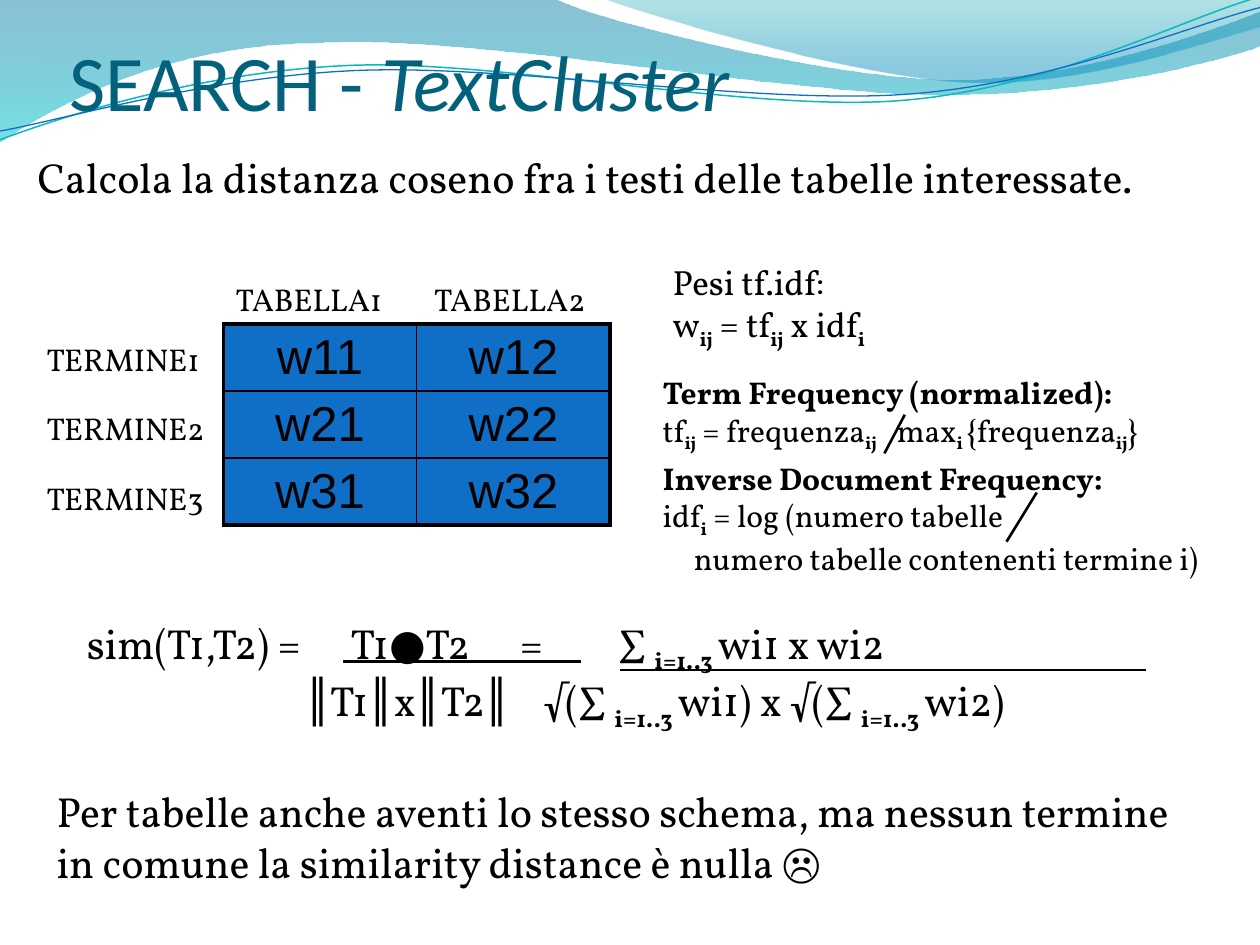
import pptx
import pptx.util
import pptx.dml.color
import pptx.enum.shapes
import pptx.enum.text
import pptx.oxml
import pptx.oxml.ns
from lxml import etree

Cm, Pt = pptx.util.Cm, pptx.util.Pt
qn = pptx.oxml.ns.qn

COLORS = {"ink": "000000", "title": "04617B", "cell": "0F6FC6",
          "teal line": "0AB8BF", "blue line": "0F6FC6"}

# Waves: start point, then straight (2 numbers) or curved (6 numbers) steps,
# measured in tenths of the slide width
WAVE_UNIT = 2.54
FILLED_WAVES = [
    ([(0, -0.01), (4.4, -0.01), (4.76, 0.17, 6.64, 0.63, 7.58, 0.63),
      (8.53, 0.63, 9.58, 0.26, 10, 0.09), (10.01, 0.36),
      (9.83, 0.44, 8.7, 0.76, 7.46, 0.75), (6.22, 0.75, 3.82, 0.28, 2.57, 0.34),
      (1.29, 0.35, 0.46, 0.83, -0.01, 1.13)],
     [(0, "0074A1", 45), (1, "00C6CF", 55)]),
    ([(4.79, -0.01), (5.09, 0.11, 6.82, 0.62, 7.69, 0.65),
      (8.56, 0.69, 9.61, 0.32, 10, 0.21), (10, 0)],
     [(0, "00A1A9", 30), (0.8, "008BBF", 45)]),
]
LINE_WAVES = [
    ([(0, 1.11), (0.48, 0.93, 1.58, 0.57, 2.77, 0.52),
      (3.95, 0.47, 5.93, 0.89, 7.13, 0.8), (8.33, 0.71, 9.38, 0.15, 9.98, -0.02)],
     "teal line", 0.85),
    ([(0, 1.04), (0.47, 0.96, 1.64, 0.61, 2.83, 0.56),
      (4.03, 0.51, 5.97, 0.83, 7.17, 0.75), (8.36, 0.67, 9.41, 0.21, 10, 0.06)],
     "blue line", 0.75),
]

# Text: pieces between tildes are subscripts; a paragraph may carry options
TITLE = "SEARCH - ~TextCluster~"
NOTES = [  # box in cm, size, paragraphs
    ((0.51, 3.12, 23.22, 2.21), 24, [
        ("Calcola la distanza coseno fra i testi delle tabelle interessate.",
         {"left": 0.96, "first": -0.96, "line": 0.8, "before": 4.8})]),
    ((1.5, 12.32, 22.61, 2.29), 24, [
        ("sim(T1,T2) =\tT1●T2\t=\t∑ ~i=1..3 ~wi1 x wi2", {"tabs": (5.32, 8.73, 10.7)}),
        ("\t║T1║x║T2║\t√(∑ ~i=1..3 ~wi1) x √(∑ ~i=1..3 ~wi2)", {"tabs": (4.4, 9.21)})]),
    ((13.31, 5.13, 5.59, 1.96), 20, [
        ("Pesi tf.idf:", {}),
        ("w~ij~ = tf~ij~ x idf~i~", {})]),
    ((13.11, 7.39, 10.52, 1.78), 18, [
        ("Term Frequency (normalized):", {"bold": True}),
        ("tf~ij~ = frequenza~ij~\tmax~i ~{frequenza~ij~}", {"tabs": (4.72,)})]),
    ((13.11, 9.12, 11.61, 2.54), 18, [
        ("Inverse Document Frequency:", {"bold": True}),
        ("idf~i~ = log (numero tabelle", {}),
        ("numero tabelle contenenti termine i)", {"left": 0.63})]),
    ((0.89, 15.72, 23.39, 2.29), 24, [
        ("Per tabelle anche aventi lo stesso schema, ma nessun termine "
         "in comune la similarity distance è nulla ☹", {})]),
]
TABLES = ["TABELLA1", "TABELLA2"]
TERMS = ["TERMINE1", "TERMINE2", "TERMINE3"]
WEIGHTS = [["w11", "w12"], ["w21", "w22"], ["w31", "w32"]]
MATRIX_LEFT, MATRIX_TOP, COLUMN_WIDTH, ROW_HEIGHT = 4.5, 6.53, 3.9, 1.35
FRACTION_BARS = [(18.24, 8.36, 17.83, 9.14), (6.91, 13.34, 11.71, 13.34),
                 (12.5, 13.51, 23.11, 13.51), (20.29, 10.92, 20.9, 9.93)]


def rgb(value):
    return pptx.dml.color.RGBColor.from_string(COLORS.get(value, value))


def wave(shapes, steps, closed):
    """Draw a wave through the step ends, then bend the curved steps."""
    steps = [[Cm(value * WAVE_UNIT) for value in step] for step in steps]
    builder = shapes.build_freeform(*steps[0])
    builder.add_line_segments([step[-2:] for step in steps[1:]], close=closed)
    shape = builder.convert_to_shape()
    shape.shadow.inherit = False
    segments = list(shape._element.iter(qn("a:lnTo")))
    for segment, step in zip(segments, steps[1:]):
        if len(step) == 6:
            segment.tag = qn("a:cubicBezTo")
            for index in (0, 2):
                control = etree.Element(qn("a:pt"), x=str(step[index] - shape.left),
                                        y=str(step[index + 1] - shape.top))
                segment.insert(index // 2, control)
    return shape


def write(paragraph, marked, size, font="Vollkorn", color="ink", bold=False, italic=False):
    """Write runs; every second piece is italic or a bold subscript."""
    for index, piece in enumerate(marked.split("~")):
        if not piece:
            continue
        run = paragraph.add_run()
        run.text = piece
        run.font.size, run.font.name, run.font.bold = Pt(size), font, bold
        run.font.color.rgb = rgb(color)
        if index % 2 and italic:
            run.font.italic = True
        elif index % 2:
            run.font.bold = True
            run.font._element.set("baseline", "-25000")


def text_box(shapes, box, size, paragraphs):
    frame = shapes.add_textbox(*map(Cm, box)).text_frame
    frame.word_wrap = True
    for index, (marked, options) in enumerate(paragraphs):
        paragraph = frame.add_paragraph() if index else frame.paragraphs[0]
        write(paragraph, marked, size, bold=options.get("bold", False))
        if "line" in options:
            paragraph.line_spacing = options["line"]
            paragraph.space_before = Pt(options["before"])
        properties = paragraph._p.get_or_add_pPr()
        for option, attribute in (("left", "marL"), ("first", "indent")):
            if option in options:
                properties.set(attribute, str(Cm(options[option])))
        if "tabs" in options:
            stops = etree.SubElement(properties, qn("a:tabLst"))
            for stop in options["tabs"]:
                etree.SubElement(stops, qn("a:tab"), pos=str(Cm(stop)), algn="l")
    return frame


def border(cell, side, width):
    line = etree.SubElement(cell._tc.get_or_add_tcPr(), qn("a:" + side), w=str(Pt(width)))
    fill = etree.SubElement(line, qn("a:solidFill"))
    etree.SubElement(fill, qn("a:srgbClr"), val=COLORS["ink"])


def main():
    deck = pptx.Presentation()
    deck.slide_width, deck.slide_height = Cm(25.4), Cm(19.05)
    shapes = deck.slides.add_slide(deck.slide_layouts[6]).shapes

    # Wave decoration
    for steps, stops in FILLED_WAVES:
        shape = wave(shapes, steps, True)
        shape.line.fill.background()
        shape.fill.gradient()
        shape.fill.gradient_angle = 270
        for stop, (position, color, opacity) in zip(shape.fill.gradient_stops, stops):
            stop.position = position
            stop.color.rgb = rgb(color)
            tone = stop._gs.find(qn("a:srgbClr"))
            etree.SubElement(tone, qn("a:alpha"), val=str(opacity * 1000))
    for steps, color, width in LINE_WAVES:
        shape = wave(shapes, steps, False)
        shape.fill.background()
        shape.line.color.rgb, shape.line.width = rgb(color), Pt(width)

    # Title
    title = text_box(shapes, (1.4, 0.41, 22.86, 2.16), 45, [])
    title.vertical_anchor = pptx.enum.text.MSO_ANCHOR.BOTTOM
    title.margin_left = title.margin_right = title.margin_bottom = 0
    write(title.paragraphs[0], TITLE, 45, "Calibri", "title", italic=True)

    # Explanations and formulas
    for note in NOTES:
        text_box(shapes, *note)

    # Weight matrix with its labels
    for index, name in enumerate(TABLES):
        text_box(shapes, (MATRIX_LEFT + 4 * index, 5.53, 3.81, 1.02), 18, [(name, {})])
    for index, name in enumerate(TERMS):
        text_box(shapes, (0.69, 6.73 + 1.4 * index, 3.78, 1.02), 18, [(name, {})])
    rows, columns = len(WEIGHTS), len(WEIGHTS[0])
    matrix = shapes.add_table(rows, columns, Cm(MATRIX_LEFT), Cm(MATRIX_TOP),
                              Cm(COLUMN_WIDTH * columns), Cm(ROW_HEIGHT * rows)).table
    matrix.first_row = matrix.horz_banding = False
    for r, weights in enumerate(WEIGHTS):
        for c, weight in enumerate(weights):
            cell = matrix.cell(r, c)
            cell.margin_top = cell.margin_bottom = Cm(0.05)
            cell.vertical_anchor = pptx.enum.text.MSO_ANCHOR.MIDDLE
            paragraph = cell.text_frame.paragraphs[0]
            paragraph.alignment = pptx.enum.text.PP_ALIGN.CENTER
            write(paragraph, weight, 28, "Arial")
            for side, outer in (("lnL", c == 0), ("lnR", c == columns - 1),
                                ("lnT", r == 0), ("lnB", r == rows - 1)):
                border(cell, side, 2.25 if outer else 1)
            cell.fill.solid()
            cell.fill.fore_color.rgb = rgb("cell")

    # Fraction bars
    for ends in FRACTION_BARS:
        bar = shapes.add_connector(pptx.enum.shapes.MSO_CONNECTOR.STRAIGHT, *map(Cm, ends))
        bar.line.color.rgb, bar.line.width = rgb("ink"), Pt(1.5)
        etree.SubElement(bar._element.spPr, qn("a:effectLst"))

    deck.save("out.pptx")


if __name__ == "__main__":
    main()
